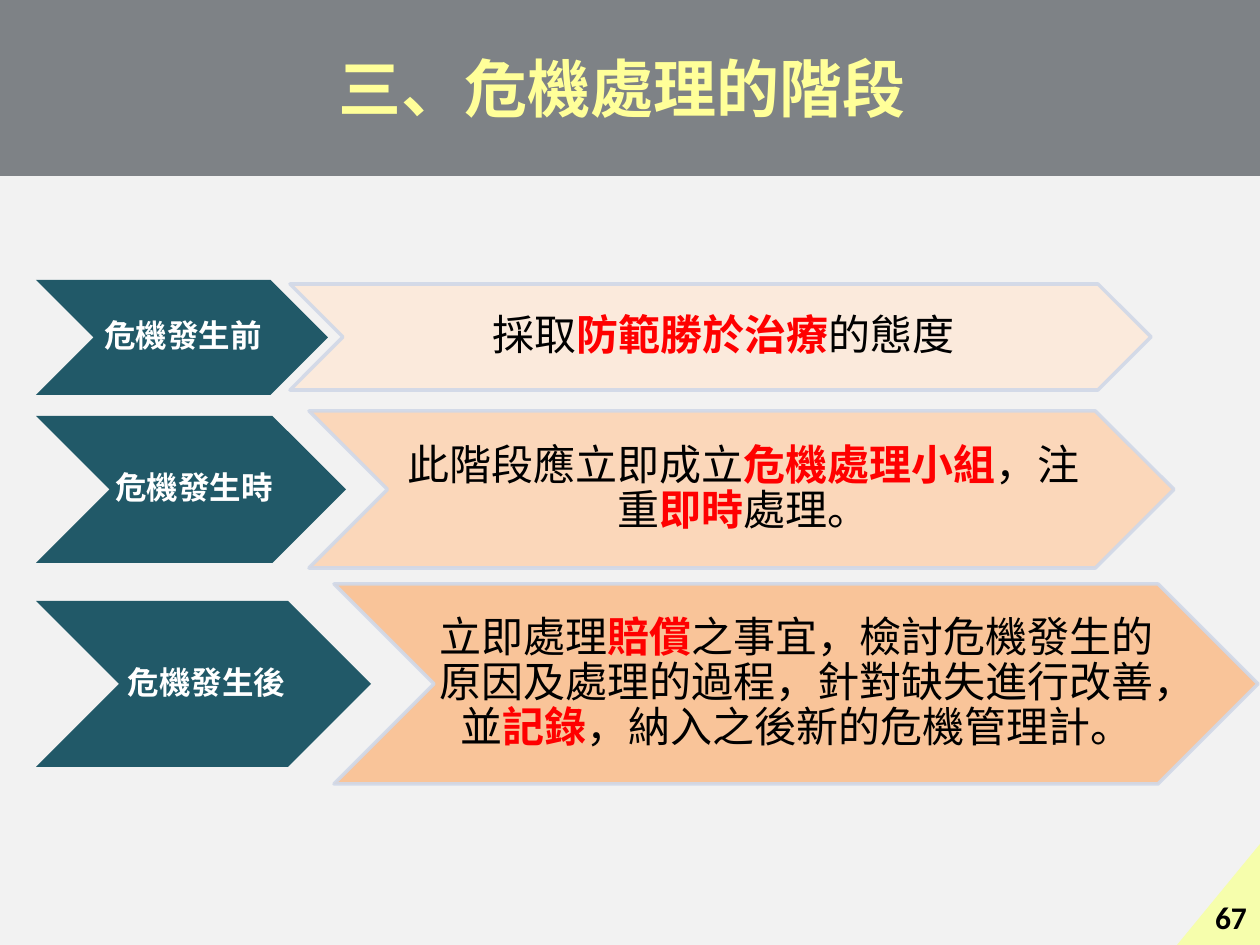
"""Builds the slide on the three stages of crisis handling."""
from lxml import etree
from pptx import Presentation
from pptx.dml.color import RGBColor
from pptx.enum.shapes import MSO_SHAPE
from pptx.enum.text import MSO_ANCHOR, PP_ALIGN
from pptx.oxml.ns import qn
from pptx.util import Pt

EMU_PER_PX = 914400 / 126
RECTANGLE, CHEVRON, TRIANGLE = MSO_SHAPE.RECTANGLE, MSO_SHAPE.CHEVRON, MSO_SHAPE.RIGHT_TRIANGLE
MIDDLE, BOTTOM = MSO_ANCHOR.MIDDLE, MSO_ANCHOR.BOTTOM
CENTER, LEFT = PP_ALIGN.CENTER, PP_ALIGN.LEFT
CJK_FONT, NUMBER_FONT = "Noto Sans CJK SC", "Calibri"
COLORS = {
    "background": "F2F2F2", "banner": "0C141C", "title": "FFFF99", "stage": "215968",
    "outline": "D0D8E8", "white": "FFFFFF", "black": "000000", "key": "FF0000",
    "corner": "F6FEAC", "light": "FDEADA", "medium": "FCD5B5", "strong": "FAC090",
}
TITLE = "三、危機處理的階段"
PAGE_NUMBER = "67"
STAGES = [
    {"name": "危機發生前", "name_box": (36, 280, 292, 115), "name_text": (93, 176),
     "detail_box": (290, 284, 861, 106), "detail_text": (344, 755), "fill": "light",
     "detail": [("採取", False), ("防範勝於治療", True), ("的態度", False)]},
    {"name": "危機發生時", "name_box": (36, 416, 310, 147), "name_text": (110, 164),
     "detail_box": (309, 411, 865, 157), "detail_text": (388, 707), "fill": "medium",
     "detail": [("此階段應立即成立", False), ("危機處理小組", True), ("，注重", False),
                ("即時", True), ("處理。", False)]},
    {"name": "危機發生後", "name_box": (36, 601, 335, 166), "name_text": (120, 169),
     "detail_box": (334, 584, 924, 200), "detail_text": (433, 723), "fill": "strong",
     "detail": [("立即處理", False), ("賠償", True),
                ("之事宜，檢討危機發生的原因及處理的過程，針對缺失進行改善，並", False),
                ("記錄", True), ("，納入之後新的危機管理計。", False)]},
]


def px(value):
    return round(value * EMU_PER_PX)


def color(name):
    return RGBColor.from_string(COLORS[name])


def set_opacity(fill_parent, percent):
    for element in fill_parent.findall(qn("a:solidFill") + "/" + qn("a:srgbClr")):
        etree.SubElement(element, qn("a:alpha")).set("val", str(percent * 1000))


def add_shape(slide, kind, box, fill, opacity=100, outline=None):
    shape = slide.shapes.add_shape(kind, *map(px, box))
    shape.shadow.inherit = False
    shape.fill.solid()
    shape.fill.fore_color.rgb = color(fill)
    properties = shape._element.spPr
    if opacity < 100:
        set_opacity(properties, opacity)
    if outline:
        shape.line.color.rgb = color(outline)
        shape.line.width = Pt(2)
        set_opacity(properties.find(qn("a:ln")), opacity)
    else:
        shape.line.fill.background()
    return shape


def add_text(slide, box, runs, size, anchor=MIDDLE, margins=(4, 2, 0, 2), spacing=0.9,
             align=CENTER, font=CJK_FONT, wrap=True):
    frame = slide.shapes.add_textbox(*map(px, box)).text_frame
    frame.word_wrap = wrap
    frame.vertical_anchor = anchor
    frame.margin_left, frame.margin_top, frame.margin_right, frame.margin_bottom = map(px, margins)
    paragraph = frame.paragraphs[0]
    paragraph.alignment = align
    paragraph.line_spacing = spacing
    for text, color_name, bold in runs:
        run = paragraph.add_run()
        run.text = text
        run.font.size = Pt(size)
        run.font.bold = bold
        run.font.color.rgb = color(color_name)
        run.font.name = font
        etree.SubElement(run.font._element, qn("a:ea")).set("typeface", font)


def add_stage(slide, stage):
    for part, fill, opacity, outline, runs, size in (
        ("name", "stage", 100, None, [(stage["name"], "white", True)], 18),
        ("detail", stage["fill"], 90, "outline",
         [(text, "key" if key else "black", key) for text, key in stage["detail"]], 24),
    ):
        box = stage[part + "_box"]
        left, width = stage[part + "_text"]
        add_shape(slide, CHEVRON, box, fill, opacity, outline)
        add_text(slide, (left, box[1], width, box[3]), runs, size)


def main():
    presentation = Presentation()
    presentation.slide_width, presentation.slide_height = px(1260), px(945)
    slide = presentation.slides.add_slide(presentation.slide_layouts[6])
    slide.background.fill.solid()
    slide.background.fill.fore_color.rgb = color("background")

    add_shape(slide, RECTANGLE, (0, 0, 1260, 176), "banner", 50)
    add_text(slide, (64, 21, 1116, 110), [(TITLE, "title", True)], 36, BOTTOM, (10, 5, 10, 5))
    for stage in STAGES:
        add_stage(slide, stage)

    corner = add_shape(slide, TRIANGLE, (1177, 844, 83, 101), "corner")
    corner.rotation = 180
    corner._element.spPr.xfrm.set("flipV", "1")
    add_text(slide, (1202, 892, 58, 50), [(PAGE_NUMBER, "black", True)], 18, MSO_ANCHOR.TOP,
             (13, 6, 13, 6), 1.0, LEFT, NUMBER_FONT, False)
    presentation.save("out.pptx")


if __name__ == "__main__":
    main()
